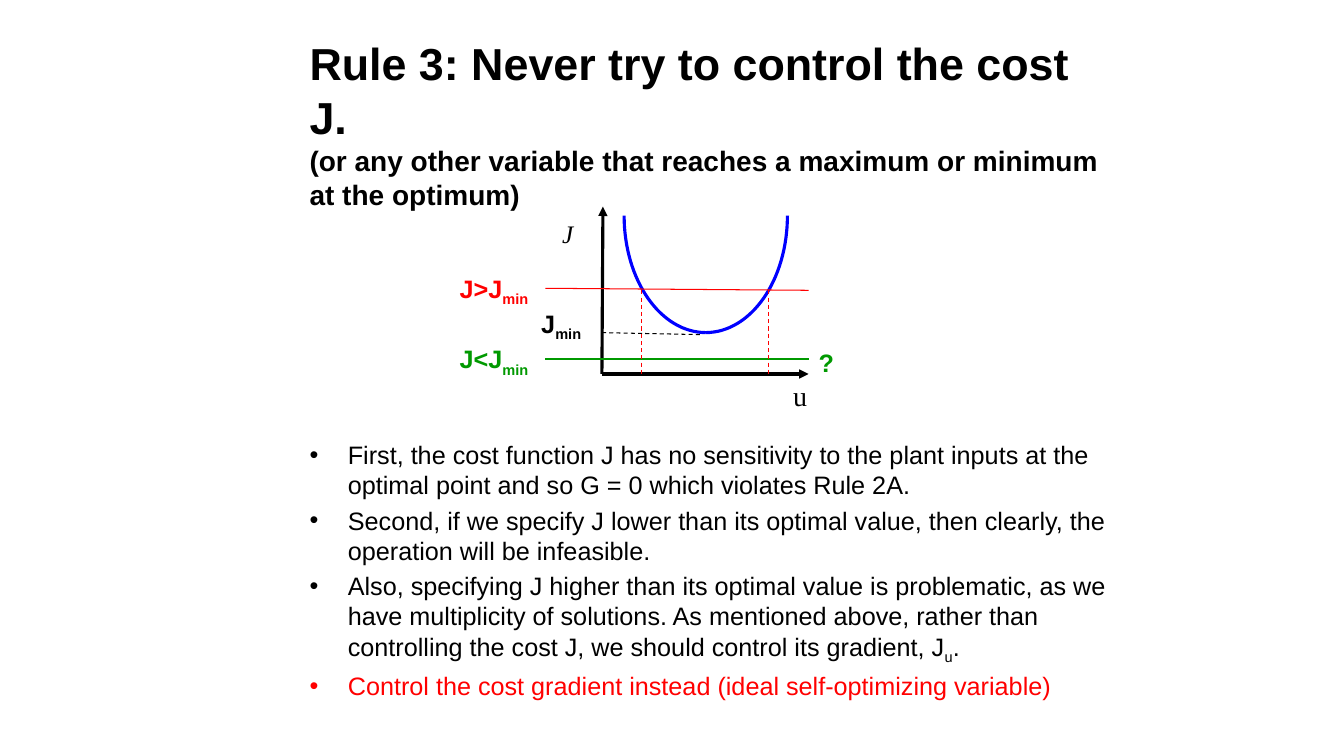
from dataclasses import dataclass
from math import cos, pi, sin

from lxml import etree
from pptx import Presentation
from pptx.dml.color import RGBColor
from pptx.enum.dml import MSO_LINE_DASH_STYLE as Dash
from pptx.enum.shapes import MSO_CONNECTOR as Connector
from pptx.enum.text import MSO_ANCHOR as Anchor, MSO_AUTO_SIZE as AutoSize, PP_ALIGN as Align
from pptx.oxml.ns import qn
from pptx.util import Inches, Pt


@dataclass(frozen=True)
class Theme:
    black: str = "000000"
    red: str = "FF0000"
    green: str = "009900"
    blue: str = "0000FF"
    sans: str = "Arial"
    serif: str = "Times New Roman"
    title: int = 32
    subtitle: int = 20
    text: int = 18
    thick: float = 2.25
    medium: float = 1.25
    thin: float = 0.75


theme = Theme()


def write(paragraph, text, size=theme.text, color=theme.black, font=theme.sans,
          bold=False, italic=False, sub=""):
    """Add text, followed by an optional subscript in the same format."""
    for part, baseline in ((text, 0), (sub, -25000)):
        if not part:
            continue
        run = paragraph.add_run()
        run.text = part
        run.font.size, run.font.name = Pt(size), font
        run.font.bold, run.font.italic = bold, italic
        run.font.color.rgb = RGBColor.from_string(color)
        if baseline:
            run._r.get_or_add_rPr().set("baseline", str(baseline))


def draw_line(start, end, color, width, dashed=False, arrow=False):
    line = slide.shapes.add_connector(
        Connector.STRAIGHT, *(Inches(value) for value in (*start, *end)))
    line.line.color.rgb = RGBColor.from_string(color)
    line.line.width = Pt(width)
    if dashed:
        line.line.dash_style = Dash.DASH
    if arrow:
        etree.SubElement(line.line._get_or_add_ln(), qn("a:tailEnd"), type="triangle")
    etree.SubElement(line._element.spPr, qn("a:effectLst"))


deck = Presentation()
deck.slide_width, deck.slide_height = Inches(13.33), Inches(7.5)
slide = deck.slides.add_slide(deck.slide_layouts[1])

# Title and subtitle
heading = slide.shapes.title
heading.left, heading.top = Inches(2.97), Inches(0.3)
heading.width, heading.height = Inches(8.22), Inches(1.85)
heading.text_frame.auto_size = AutoSize.NONE
heading.text_frame.vertical_anchor = Anchor.MIDDLE
rule = heading.text_frame.paragraphs[0]
extension = heading.text_frame.add_paragraph()
rule.alignment = extension.alignment = Align.LEFT
write(rule, "Rule 3: Never try to control the cost J.", size=theme.title, bold=True)
write(extension, "(or any other variable that reaches a maximum or minimum at the optimum)",
      size=theme.subtitle, bold=True)

# Reasons
reasons = slide.placeholders[1]
reasons.left, reasons.top = Inches(2.97), Inches(1.16)
reasons.width, reasons.height = Inches(8.1), Inches(5.84)
reasons.text_frame.auto_size = AutoSize.NONE
reasons.text_frame.vertical_anchor = Anchor.BOTTOM
reason_texts = [
    ("First, the cost function J has no sensitivity to the plant inputs at the optimal point "
     "and so G = 0 which violates Rule 2A.", "", "", theme.black),
    ("Second, if we specify J lower than its optimal value, then clearly, the operation "
     "will be infeasible.", "", "", theme.black),
    ("Also, specifying J higher than its optimal value is problematic, as we have multiplicity "
     "of solutions. As mentioned above, rather than controlling the cost J, we should control "
     "its gradient, J", "u", ".", theme.black),
    ("Control the cost gradient instead (ideal self-optimizing variable)", "", "", theme.red),
]
for index, (text, sub, ending, color) in enumerate(reason_texts):
    frame = reasons.text_frame
    reason = frame.add_paragraph() if index else frame.paragraphs[0]
    properties = reason._p.get_or_add_pPr()
    properties.set("marL", str(Inches(0.38)))
    properties.set("indent", str(-Inches(0.38)))
    reason.space_before = Pt(0.2 * theme.text if index else 0)
    etree.SubElement(properties, qn("a:buChar"), char="•")
    write(reason, text, color=color, sub=sub)
    write(reason, ending, color=color)

# Axes
origin = (5.97, 3.71)
axis_end = 8.02
draw_line(origin, (5.98, 2.05), theme.black, theme.thick, arrow=True)
draw_line(origin, (axis_end, 3.71), theme.black, theme.thick, arrow=True)

# Cost curve: two quarter ellipses that meet at the minimum
center_x, rim_y, radius_x, radius_y = 7.0, 2.14, 0.81, 1.16
steps = 32
for side in (1, -1):
    angles = [pi / 2 * step / steps for step in range(steps + 1)]
    points = [(Inches(center_x + side * radius_x * sin(angle)),
               Inches(rim_y + radius_y * cos(angle))) for angle in angles]
    builder = slide.shapes.build_freeform(*points[0])
    builder.add_line_segments(points[1:], close=False)
    curve = builder.convert_to_shape()
    curve.fill.background()
    curve.line.color.rgb = RGBColor.from_string(theme.blue)
    curve.line.width = Pt(theme.thick)
    curve.shadow.inherit = False

# Cost levels and the two solutions
draw_line((5.97, 3.3), (6.96, 3.32), theme.black, theme.thin, dashed=True)
draw_line((5.41, 2.86), (axis_end, 2.88), theme.red, theme.thin)
draw_line((5.41, 3.56), (axis_end, 3.56), theme.green, theme.medium)
for solution_x in (6.36, 7.62):
    draw_line((solution_x, 2.88), (solution_x, 3.71), theme.red, theme.thin, dashed=True)

# Labels: place, text, alignment, format
axis_format = dict(font=theme.serif)
level_format = dict(bold=True, sub="min")
labels = [
    ((7.25, 3.71, 1.37, 0.44), "u", Align.CENTER, dict(axis_format, size=theme.subtitle)),
    ((5.1, 2.12, 1.06, 0.4), "J", Align.CENTER, dict(axis_format, italic=True)),
    ((5.27, 3.01, 0.64, 0.4), "J", Align.LEFT, level_format),
    ((4.46, 2.66, 0.93, 0.4), "J>J", Align.LEFT, dict(level_format, color=theme.red)),
    ((4.46, 3.36, 0.93, 0.4), "J<J", Align.LEFT, dict(level_format, color=theme.green)),
    ((8.02, 3.4, 0.36, 0.4), "?", Align.LEFT, dict(bold=True, color=theme.green)),
]
for place, text, alignment, text_format in labels:
    label = slide.shapes.add_textbox(*(Inches(value) for value in place))
    label.text_frame.word_wrap = alignment == Align.CENTER
    label.text_frame.paragraphs[0].alignment = alignment
    write(label.text_frame.paragraphs[0], text, **text_format)

deck.save("out.pptx")
